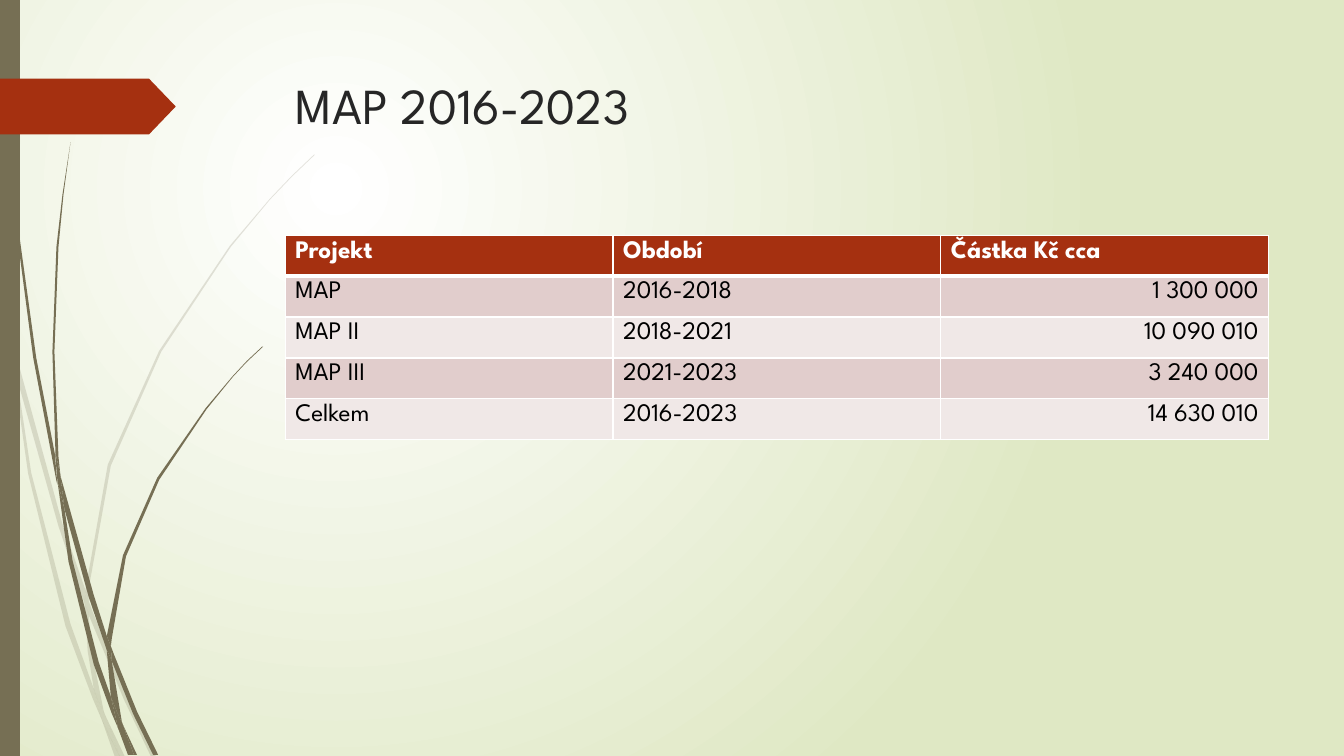
from lxml import etree
from pptx import Presentation
from pptx.dml.color import RGBColor
from pptx.enum.shapes import MSO_SHAPE
from pptx.enum.text import MSO_ANCHOR, PP_ALIGN
from pptx.oxml.ns import qn
from pptx.util import Cm, Pt

TITLE = "MAP 2016-2023"
ROWS = [
    ("Projekt", "Období", "Částka Kč cca"),
    ("MAP", "2016-2018", "1 300 000"),
    ("MAP II", "2018-2021", "10 090 010"),
    ("MAP III", "2021-2023", "3 240 000"),
    ("Celkem", "2016-2023", "14 630 010"),
]
FONT = "League Spartan"
OLIVE, RED, WHITE = "766F54", "A53010", "FFFFFF"
BAND_COLORS = ("F0E8E7", "E1CDCC")
SLIDE_WIDTH, SLIDE_HEIGHT = 33.87, 19.05
TABLE_LEFT, TABLE_TOP, COLUMN_WIDTH, ROW_HEIGHT = 7.19, 5.93, 8.26, 1.03

# Outlines of the grass pieces, in steps of the drawing grid
GRASS_GRID = Cm(0.0254)
PALE_GRASS = [
    [(11, 350), (9, 322), (0, 282), (0, 299), (10, 344)],
    [(58, 522), (84, 599), (85, 586), (62, 520), (14, 345), (17, 376)],
    [(92, 607), (88, 596), (88, 610), (123, 694), (150, 751), (155, 751), (127, 692)],
    [(119, 751), (124, 751), (105, 711)],
    [(93, 683), (70, 619), (31, 469), (17, 376), (11, 350), (28, 470), (65, 621),
     (92, 693), (101, 714), (99, 707)],
    [(84, 599), (87, 646), (93, 683), (96, 692), (105, 711), (103, 706), (91, 646),
     (88, 610), (88, 608)],
    [(88, 584), (110, 462), (160, 349), (229, 245), (268, 198), (290, 175), (312, 154),
     (312, 153), (289, 175), (268, 197), (228, 244), (158, 348), (107, 461), (85, 584),
     (85, 586), (88, 596)],
    [(101, 714), (114, 751), (119, 751)],
    [(88, 608), (88, 610), (88, 596), (85, 586), (84, 599)],
    [(96, 692), (93, 683), (99, 707), (101, 714), (119, 751), (105, 711)],
]
DARK_GRASS = [
    [(7, 110), (17, 233), (33, 355), (56, 477), (57, 481), (55, 457), (55, 453),
     (36, 355), (19, 232), (8, 109), (5, 48), (4, 0), (3, 0), (4, 48)],
    [(88, 592), (106, 645), (106, 633), (106, 631), (93, 590), (60, 472), (64, 505)],
    [(113, 649), (110, 641), (111, 656), (132, 708), (152, 749), (157, 749), (136, 706)],
    [(110, 691), (98, 657), (72, 556), (64, 505), (57, 477), (68, 557), (93, 659),
     (111, 708), (117, 722), (116, 717)],
    [(60, 472), (58, 453), (54, 349), (58, 245), (63, 193), (70, 141), (62, 193),
     (56, 245), (52, 349), (55, 449)],
    [(133, 749), (136, 749), (122, 719)],
    [(57, 477), (64, 505), (60, 472), (55, 449), (55, 453)],
    [(111, 633), (125, 552), (158, 476), (205, 406), (231, 374), (245, 359), (261, 344),
     (260, 344), (245, 358), (231, 373), (204, 405), (156, 474), (122, 551), (106, 631),
     (110, 641)],
    [(117, 722), (127, 749), (131, 749)],
    [(106, 645), (110, 691), (116, 706), (122, 719), (121, 716), (111, 656), (109, 651)],
    [(106, 645), (109, 651), (111, 656), (110, 641), (106, 631), (106, 633)],
    [(116, 706), (110, 691), (116, 717), (117, 722), (130, 749), (133, 749), (122, 719)],
]


def color(hex_value):
    return RGBColor.from_string(hex_value)


def paint(shape, hex_value):
    shape.shadow.inherit = False
    shape.fill.solid()
    shape.fill.fore_color.rgb = color(hex_value)
    shape.line.fill.background()


def write(text_frame, text, size, hex_value, bold=False, align=PP_ALIGN.LEFT):
    paragraph = text_frame.paragraphs[0]
    paragraph.alignment = align
    run = paragraph.add_run()
    run.text = text
    for name, value in {"name": FONT, "size": Pt(size), "bold": bold}.items():
        setattr(run.font, name, value)
    run.font.color.rgb = color(hex_value)


def add_grass(slide, pieces, opacity):
    """Draw the pieces with the given opacity in percent."""
    for outline in pieces:
        builder = slide.shapes.build_freeform(*outline[0], scale=GRASS_GRID)
        builder.add_line_segments(outline[1:], close=True)
        piece = builder.convert_to_shape()
        paint(piece, OLIVE)
        if opacity < 100:
            fill_color = piece.element.spPr.find(".//" + qn("a:srgbClr"))
            etree.SubElement(fill_color, qn("a:alpha"), val=str(opacity * 1000))


def set_background(slide):
    fill = slide.background.fill
    fill.gradient()
    for stop, position, hex_value in zip(fill.gradient_stops, (0, 1), (WHITE, "DFE8C4")):
        stop.position = position
        stop.color.rgb = color(hex_value)
    gradient = slide.element.find(".//" + qn("a:gradFill"))
    gradient.remove(gradient.find(qn("a:lin")))
    circle = etree.SubElement(gradient, qn("a:path"), {"path": "circle"})
    etree.SubElement(circle, qn("a:fillToRect"),
                     l="50000", t="50000", r="100000", b="100000")


def add_borders(cell, widths):
    properties = cell._tc.get_or_add_tcPr()
    for side, width in widths.items():
        line = etree.SubElement(properties, qn("a:ln" + side), w=str(Pt(width)))
        fill = etree.SubElement(line, qn("a:solidFill"))
        etree.SubElement(fill, qn("a:srgbClr"), val=WHITE)


def add_project_table(slide):
    column_count, row_count = len(ROWS[0]), len(ROWS)
    table = slide.shapes.add_table(
        row_count, column_count, Cm(TABLE_LEFT), Cm(TABLE_TOP),
        Cm(column_count * COLUMN_WIDTH), Cm(row_count * ROW_HEIGHT)).table
    for column in table.columns:
        column.width = Cm(COLUMN_WIDTH)
    for row_index, values in enumerate(ROWS):
        table.rows[row_index].height = Cm(ROW_HEIGHT)
        header = row_index == 0
        for column_index, value in enumerate(values):
            cell = table.cell(row_index, column_index)
            add_borders(cell, {"L": 1, "R": 1, "T": 3 if row_index == 1 else 1,
                               "B": 3 if header else 1})
            cell.fill.solid()
            cell.fill.fore_color.rgb = color(RED if header else BAND_COLORS[row_index % 2])
            amount = column_index == column_count - 1 and not header
            write(cell.text_frame, value, 18, WHITE if header else "000000",
                  header, PP_ALIGN.RIGHT if amount else PP_ALIGN.LEFT)


def main():
    presentation = Presentation()
    presentation.slide_width, presentation.slide_height = Cm(SLIDE_WIDTH), Cm(SLIDE_HEIGHT)
    slide = presentation.slides.add_slide(presentation.slide_layouts[5])
    set_background(slide)
    add_grass(slide, PALE_GRASS, 20)
    add_grass(slide, DARK_GRASS, 100)

    side_bar = slide.shapes.add_shape(
        MSO_SHAPE.RECTANGLE, 0, 0, Cm(0.5), Cm(SLIDE_HEIGHT))
    paint(side_bar, OLIVE)
    red_arrow = slide.shapes.add_shape(
        MSO_SHAPE.PENTAGON, 0, Cm(1.98), Cm(4.43), Cm(1.41))
    red_arrow.adjustments[0] = 0.48
    paint(red_arrow, RED)

    title = slide.shapes.title
    for name, value in {"left": 7.2, "top": 1.73, "width": 24.77, "height": 3.56}.items():
        setattr(title, name, Cm(value))
    title.text_frame.vertical_anchor = MSO_ANCHOR.TOP
    write(title.text_frame, TITLE, 36, "262626")
    add_project_table(slide)
    presentation.save("out.pptx")


if __name__ == "__main__":
    main()
